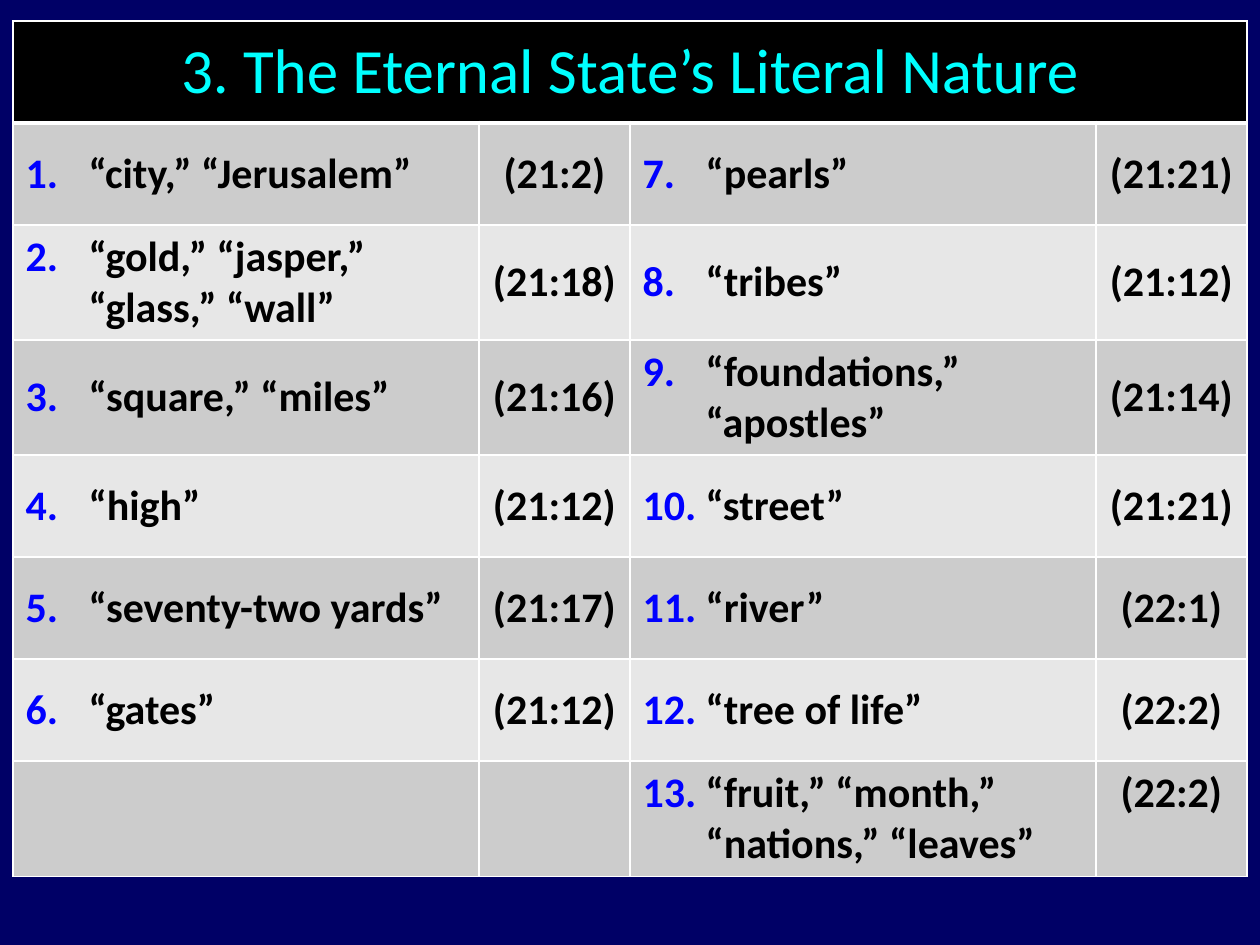
from lxml import etree
from pptx import Presentation
from pptx import util as u
from pptx.dml.color import RGBColor
from pptx.enum import text
from pptx.oxml import ns

PX = u.Inches(1) / 126
NAVY = RGBColor(0x00, 0x00, 0x66)
BLACK = RGBColor(0x00, 0x00, 0x00)
WHITE = RGBColor(0xFF, 0xFF, 0xFF)
CYAN = RGBColor(0x00, 0xFF, 0xFF)
BLUE = RGBColor(0x00, 0x00, 0xFF)
DARK_BAND = RGBColor(0xCC, 0xCC, 0xCC)
LIGHT_BAND = RGBColor(0xE7, 0xE7, 0xE7)

FONT = "Calibri"
HEADING = "3. The Eternal State’s Literal Nature"
COLUMN_WIDTHS = (466, 151, 466, 151)
ROW_HEIGHT = 102
ROWS = 8
LEFT_COUNT = 6
FEATURES = [
    ("“city,” “Jerusalem”", "(21:2)"),
    ("“gold,” “jasper,” “glass,” “wall”", "(21:18)"),
    ("“square,” “miles”", "(21:16)"),
    ("“high”", "(21:12)"),
    ("“seventy-two yards”", "(21:17)"),
    ("“gates”", "(21:12)"),
    ("“pearls”", "(21:21)"),
    ("“tribes”", "(21:12)"),
    ("“foundations,” “apostles”", "(21:14)"),
    ("“street”", "(21:21)"),
    ("“river”", "(22:1)"),
    ("“tree of life”", "(22:2)"),
    ("“fruit,” “month,” “nations,” “leaves”", "(22:2)"),
]


def px(length):
    return u.Emu(round(length * PX))


def add_color(parent, color):
    etree.SubElement(parent, ns.qn("a:srgbClr"), val=str(color))


def set_borders(cell, top=1, bottom=1):
    properties = cell._tc.get_or_add_tcPr()
    for side, width in (("L", 1), ("R", 1), ("T", top), ("B", bottom)):
        border = etree.SubElement(properties, ns.qn(f"a:ln{side}"), w=str(u.Pt(width)))
        add_color(etree.SubElement(border, ns.qn("a:solidFill")), WHITE)


def fill_cell(cell, color):
    cell.fill.solid()
    cell.fill.fore_color.rgb = color
    cell.vertical_anchor = text.MSO_ANCHOR.MIDDLE


def write_cell(cell, wording, size, color, bold, centered):
    cell.text_frame.text = wording
    paragraph = cell.text_frame.paragraphs[0]
    paragraph.alignment = text.PP_ALIGN.CENTER if centered else text.PP_ALIGN.LEFT
    font = paragraph.runs[0].font
    font.name = FONT
    font.size = u.Pt(size)
    font.bold = bold
    font.color.rgb = color


def number_cell(cell, number):
    properties = cell.text_frame.paragraphs[0]._p.get_or_add_pPr()
    properties.set("marL", str(px(63)))
    properties.set("indent", str(px(-63)))
    add_color(etree.SubElement(properties, ns.qn("a:buClr")), BLUE)
    etree.SubElement(properties, ns.qn("a:buFont"), typeface="+mj-lt")
    etree.SubElement(properties, ns.qn("a:buAutoNum"), type="arabicPeriod", startAt=str(number))


def add_grid(slide):
    frame = slide.shapes.add_table(
        ROWS, len(COLUMN_WIDTHS), px(13), px(21), px(sum(COLUMN_WIDTHS)), px(ROWS * ROW_HEIGHT)
    )
    table = frame.table
    for column, width in zip(table.columns, COLUMN_WIDTHS):
        column.width = px(width)
    for index, row in enumerate(table.rows):
        row.height = px(ROW_HEIGHT)
        band = BLACK if index == 0 else DARK_BAND if index % 2 else LIGHT_BAND
        for cell in row.cells:
            set_borders(cell, top=3 if index == 1 else 1, bottom=3 if index == 0 else 1)
            fill_cell(cell, band)
    return table


def add_heading(table):
    heading = table.cell(0, 0)
    heading.merge(table.cell(0, len(COLUMN_WIDTHS) - 1))
    write_cell(heading, HEADING, 36, CYAN, False, True)


def add_features(table):
    for index, (feature, verse) in enumerate(FEATURES):
        half, offset = (0, index) if index < LEFT_COUNT else (1, index - LEFT_COUNT)
        feature_cell = table.cell(offset + 1, half * 2)
        verse_cell = table.cell(offset + 1, half * 2 + 1)
        write_cell(feature_cell, feature, 24, BLACK, True, False)
        number_cell(feature_cell, index + 1)
        write_cell(verse_cell, verse, 24, BLACK, True, True)
    verse_cell.vertical_anchor = text.MSO_ANCHOR.TOP


def main():
    deck = Presentation()
    deck.slide_width, deck.slide_height = px(1260), px(945)
    slide = deck.slides.add_slide(deck.slide_layouts[6])
    slide.background.fill.solid()
    slide.background.fill.fore_color.rgb = NAVY
    table = add_grid(slide)
    add_heading(table)
    add_features(table)
    deck.save("out.pptx")


if __name__ == "__main__":
    main()
